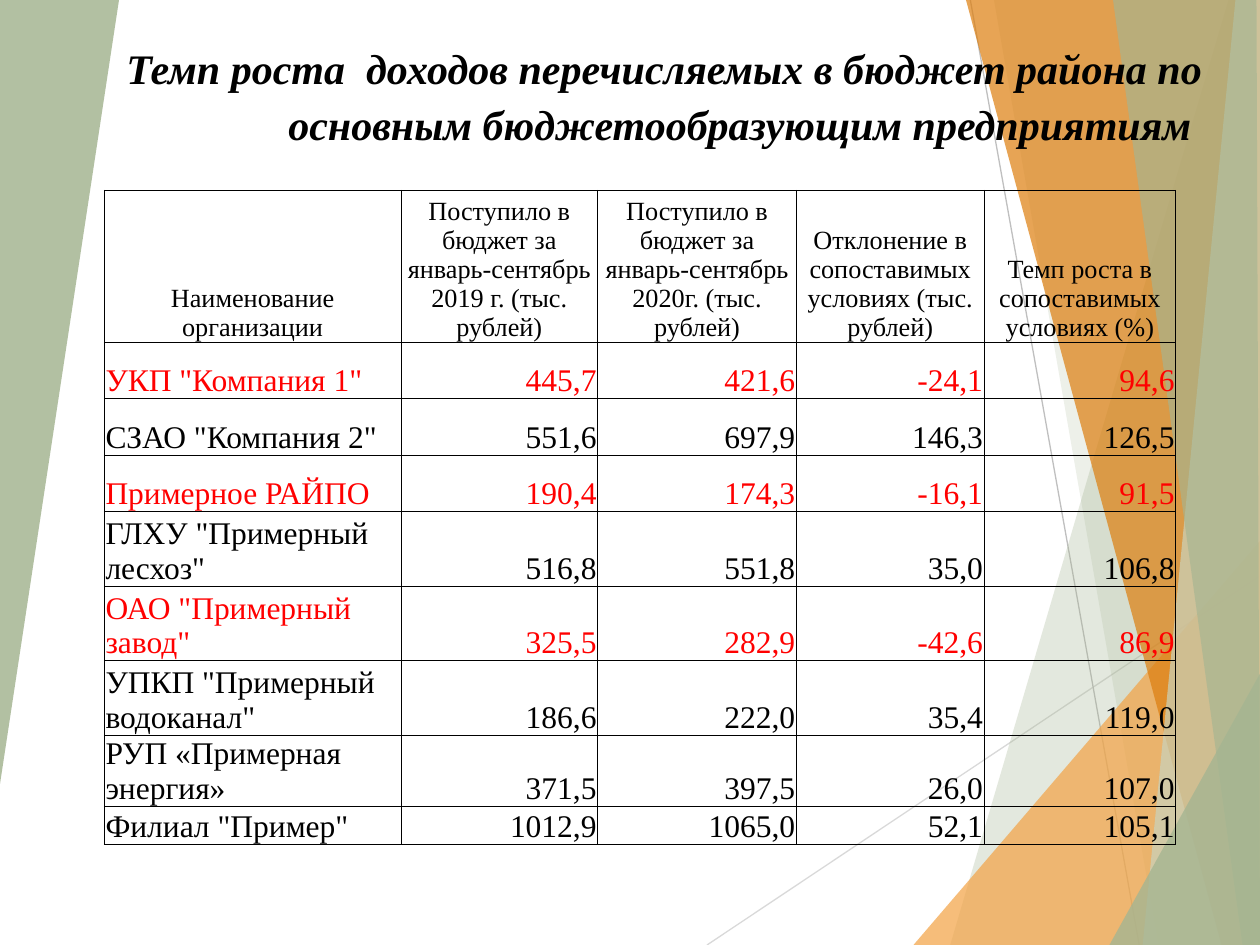
from dataclasses import dataclass
from lxml.etree import SubElement
from pptx import Presentation
from pptx.dml.color import RGBColor as RGB
from pptx.enum.text import MSO_ANCHOR as ANCHOR, MSO_AUTO_SIZE as AUTO, PP_ALIGN as ALIGN
from pptx.enum.shapes import MSO_CONNECTOR as CONNECTOR
from pptx.oxml.ns import qn
from pptx.util import Pt


@dataclass(frozen=True)
class Theme:
    font: str = "Times New Roman"
    text: str = "000000"
    decline: str = "FF0000"
    sage: str = "A5B592"
    pale_sage: str = "C9D3BE"
    amber: str = "F3A447"
    orange: str = "DD7E0E"
    title_size: float = 24
    header_size: float = 15
    body_size: float = 18
    border: float = 0.5
    ray: float = 0.75


THEME = Theme()
WIDTH, HEIGHT = 720, 540

TITLE = "Темп роста  доходов перечисляемых в бюджет района по основным бюджетообразующим предприятиям "
HEADER = (
    "Наименование организации",
    "Поступило в бюджет за январь-сентябрь 2019 г. (тыс. рублей)",
    "Поступило в бюджет за январь-сентябрь 2020г. (тыс. рублей)",
    "Отклонение в сопоставимых условиях (тыс. рублей)",
    "Темп роста в сопоставимых условиях (%)",
)
ENTERPRISES = [
    ('УКП "Компания 1"', "445,7", "421,6", "-24,1", "94,6"),
    ('СЗАО "Компания 2"', "551,6", "697,9", "146,3", "126,5"),
    ("Примерное РАЙПО", "190,4", "174,3", "-16,1", "91,5"),
    ('ГЛХУ "Примерный лесхоз"', "516,8", "551,8", "35,0", "106,8"),
    ('ОАО "Примерный завод"', "325,5", "282,9", "-42,6", "86,9"),
    ('УПКП "Примерный водоканал"', "186,6", "222,0", "35,4", "119,0"),
    ("РУП «Примерная энергия»", "371,5", "397,5", "26,0", "107,0"),
    ('Филиал "Пример"', "1012,9", "1065,0", "52,1", "105,1"),
]
TABLE_LEFT, TABLE_TOP = 59.6, 108.7
COLUMNS = [169.5, 112.5, 113.5, 107.3, 109.5]
ROWS = [86.8] + [32.3] * 3 + [42.6] * 3 + [40.3, 21.6]

RAYS = [
    ((404, HEIGHT), (WIDTH, 329), "D9D9D9"),
    ((554.5, 0), (651, HEIGHT), "BFBFBF"),
]
FACETS = [
    ([(702, 0), (543, HEIGHT), (WIDTH, HEIGHT), (WIDTH, 0)], THEME.sage, 30),
    ([(567.5, 0), (661.5, HEIGHT), (WIDTH, HEIGHT), (WIDTH, 0)], THEME.sage, 20),
    ([(522.5, HEIGHT), (WIDTH, 309), (WIDTH, HEIGHT)], THEME.amber, 72),
    ([(552, 0), (698.5, HEIGHT), (WIDTH, HEIGHT), (WIDTH, 0)], THEME.orange, 70),
    ([(706.5, 0), (653, HEIGHT), (WIDTH, HEIGHT), (WIDTH, 0)], THEME.pale_sage, 70),
    ([(636, 0), (710, HEIGHT), (WIDTH, HEIGHT), (718.5, 0)], THEME.sage, 65),
    ([(634.5, HEIGHT), (WIDTH, 385), (WIDTH, HEIGHT)], THEME.sage, 80),
    ([(0, 0), (67.5, 0), (0, 448)], THEME.sage, 85),
]


def style_text(p, size, color, align, bold=False, italic=False):
    p.alignment = align
    for r in p.runs:
        r.font.name = THEME.font
        r.font.size = Pt(size)
        r.font.bold = bold
        r.font.italic = italic
        r.font.color.rgb = RGB.from_string(color)


def add_ray(s, start, end, color):
    line = s.shapes.add_connector(CONNECTOR.STRAIGHT, *map(Pt, start + end))
    line.line.color.rgb = RGB.from_string(color)
    line.line.width = Pt(THEME.ray)
    SubElement(line.element.spPr, qn("a:effectLst"))


def add_facet(s, points, color, opacity):
    builder = s.shapes.build_freeform(*points[0], scale=Pt(1))
    builder.add_line_segments(points[1:], close=True)
    sp = builder.convert_to_shape()
    sp.shadow.inherit = False
    sp.line.fill.background()
    sp.fill.solid()
    sp.fill.fore_color.rgb = RGB.from_string(color)
    tint = sp.element.spPr.find(".//" + qn("a:srgbClr"))
    SubElement(tint, qn("a:alpha"), val=str(opacity * 1000))


def place_title(s):
    title = s.shapes.title
    title.element.getparent().append(title.element)
    title.left, title.top, title.width, title.height = map(Pt, (36.5, 15, 657.5, 73.5))
    tf = title.text_frame
    tf.text = TITLE
    tf.word_wrap = True
    tf.auto_size = AUTO.NONE
    tf.vertical_anchor = ANCHOR.BOTTOM
    p = tf.paragraphs[0]
    p.line_spacing = 1.1
    p.space_before = Pt(0)
    style_text(p, THEME.title_size, THEME.text, ALIGN.RIGHT, bold=True, italic=True)


def add_borders(cell):
    props = cell._tc.get_or_add_tcPr()
    for side in ("lnL", "lnR", "lnT", "lnB"):
        line = SubElement(props, qn("a:" + side), w=str(Pt(THEME.border)))
        fill = SubElement(line, qn("a:solidFill"))
        SubElement(fill, qn("a:srgbClr"), val=THEME.text)


def fill_cell(cell, text, size, color, align):
    cell.text = text
    cell.vertical_anchor = ANCHOR.BOTTOM
    cell.margin_left = cell.margin_right = cell.margin_top = Pt(0.7)
    cell.margin_bottom = Pt(0)
    add_borders(cell)
    cell.fill.background()
    style_text(cell.text_frame.paragraphs[0], size, color, align)


def add_income_table(s):
    frame = s.shapes.add_table(
        len(ROWS), len(COLUMNS), Pt(TABLE_LEFT), Pt(TABLE_TOP), Pt(sum(COLUMNS)), Pt(sum(ROWS))
    )
    table = frame.table
    table.first_row = table.horz_banding = False
    for column, width in zip(table.columns, COLUMNS):
        column.width = Pt(width)
    for row, height in zip(table.rows, ROWS):
        row.height = Pt(height)
    for c, text in enumerate(HEADER):
        fill_cell(table.cell(0, c), text, THEME.header_size, THEME.text, ALIGN.CENTER)
    for r, record in enumerate(ENTERPRISES, start=1):
        color = THEME.decline if record[3].startswith("-") else THEME.text
        for c, text in enumerate(record):
            align = ALIGN.RIGHT if c else ALIGN.LEFT
            fill_cell(table.cell(r, c), text, THEME.body_size, color, align)


def main():
    prs = Presentation()
    prs.slide_width, prs.slide_height = Pt(WIDTH), Pt(HEIGHT)
    s = prs.slides.add_slide(prs.slide_layouts[5])
    for ray in RAYS:
        add_ray(s, *ray)
    for facet in FACETS:
        add_facet(s, *facet)
    place_title(s)
    add_income_table(s)
    prs.save("out.pptx")


if __name__ == "__main__":
    main()
